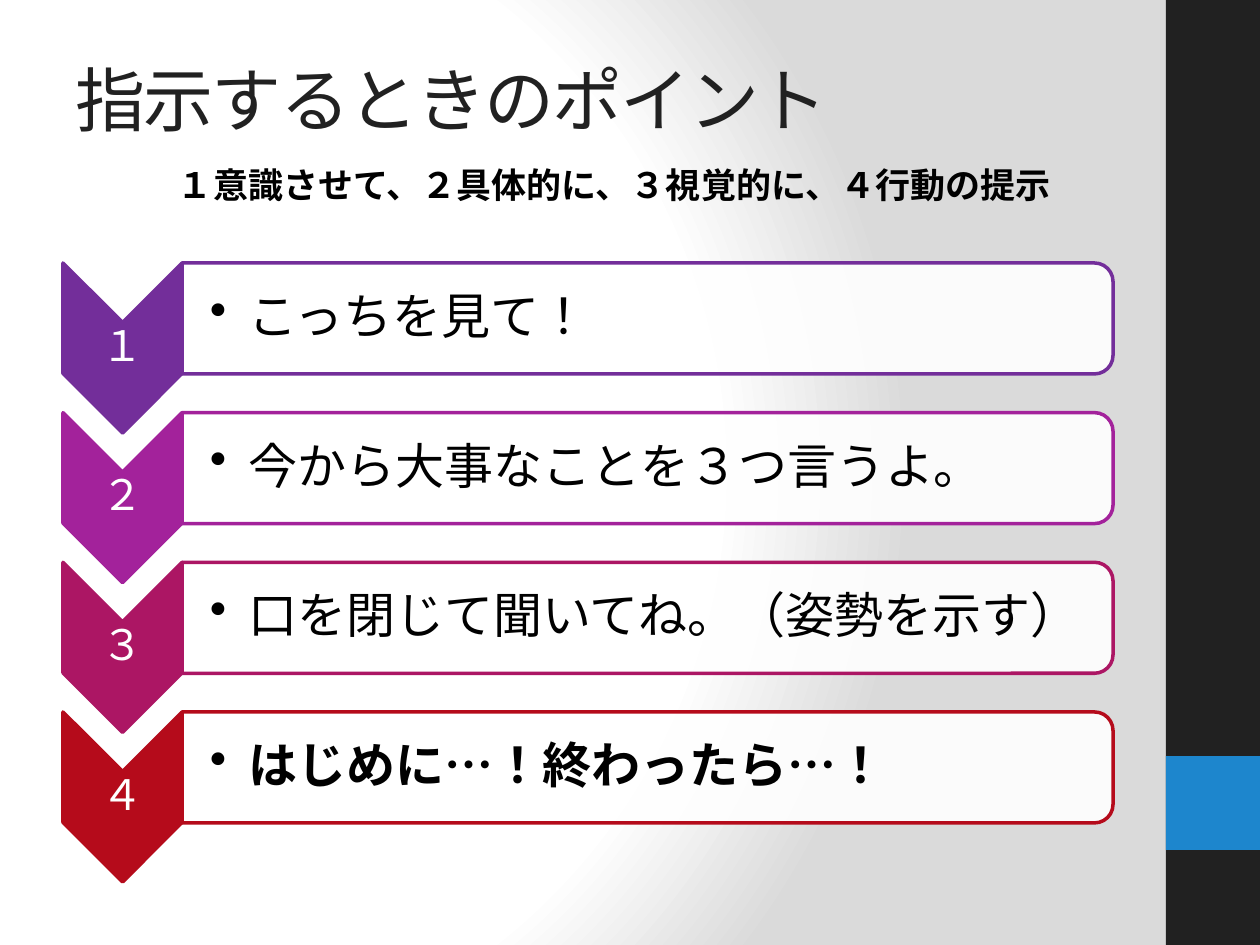
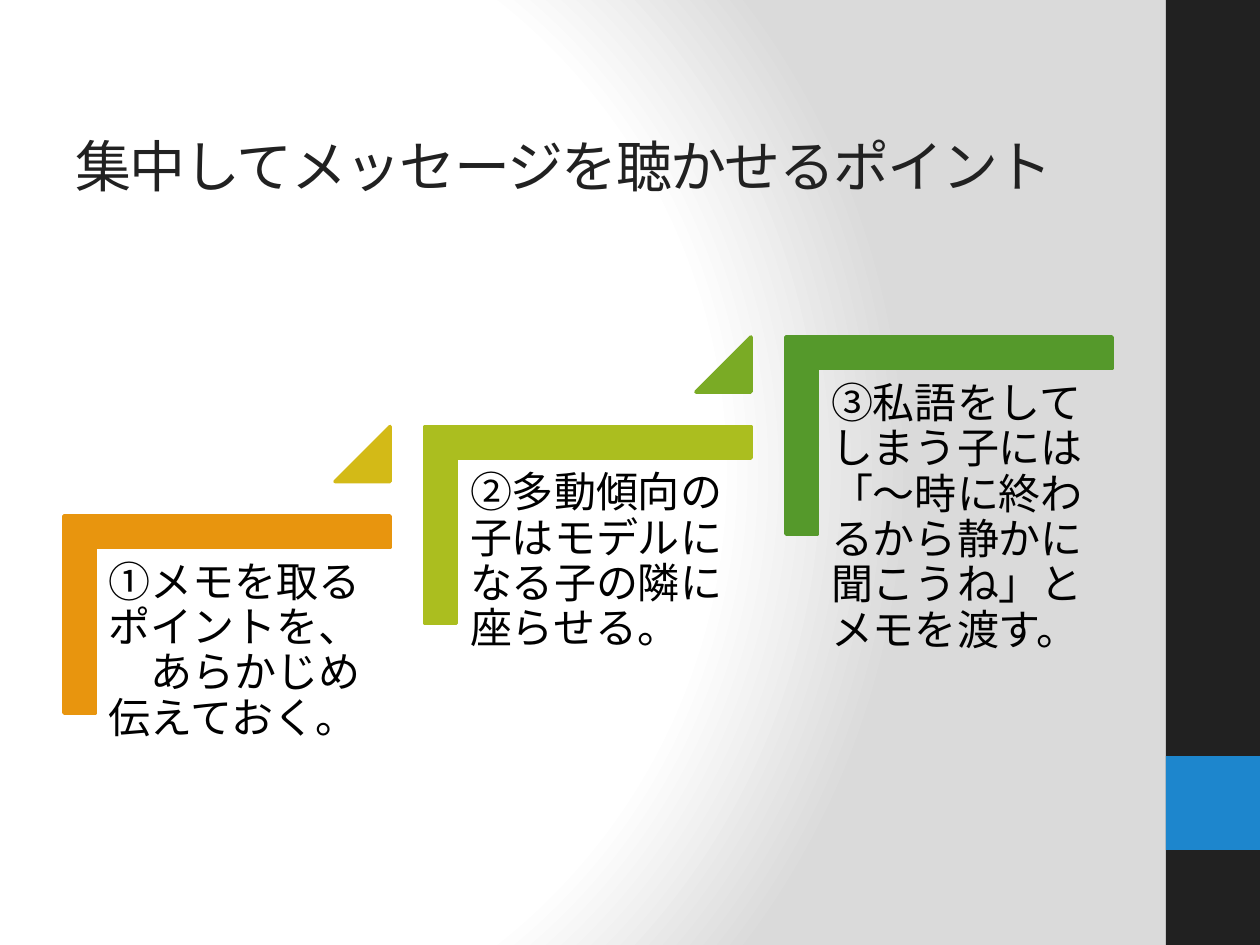
from pptx import Presentation
from pptx.dml.color import RGBColor
from pptx.enum.lang import MSO_LANGUAGE_ID as Language
from pptx.enum.shapes import MSO_SHAPE as Shape
from pptx.enum.text import MSO_ANCHOR as Anchor, MSO_AUTO_SIZE as AutoSize, PP_ALIGN as Align
from pptx.oxml import parse_xml
from pptx.oxml.ns import qn
from pptx.util import Emu, Pt

PX_PER_INCH = 126
SLIDE_WIDTH, SLIDE_HEIGHT = 1260, 945

BLACK = RGBColor(0x00, 0x00, 0x00)
WHITE = RGBColor(0xFF, 0xFF, 0xFF)
CHARCOAL = RGBColor(0x21, 0x21, 0x21)
BLUE = RGBColor(0x1D, 0x86, 0xCD)
PURPLE = RGBColor(0x73, 0x2E, 0x9A)
MAGENTA = RGBColor(0xA3, 0x22, 0x9B)
CRIMSON = RGBColor(0xAC, 0x16, 0x64)
RED = RGBColor(0xB5, 0x0B, 0x1B)
ORANGE = RGBColor(0xE8, 0x95, 0x0E)
YELLOW = RGBColor(0xD3, 0xBA, 0x17)
LIME = RGBColor(0xAB, 0xBE, 0x1F)
LEAF = RGBColor(0x7A, 0xAB, 0x25)
GREEN = RGBColor(0x55, 0x99, 0x2B)

TITLE_FONT, BODY_FONT, STEP_FONT = "Cambria", "Calibri", "Arial"

BACKGROUND = """
<a:gradFill xmlns:a="http://schemas.openxmlformats.org/drawingml/2006/main" rotWithShape="1">
  <a:gsLst>
    <a:gs pos="0"><a:srgbClr val="FFFFFF"/></a:gs>
    <a:gs pos="75000"><a:srgbClr val="FFFFFF"/></a:gs>
    <a:gs pos="100000"><a:srgbClr val="DADADA"/></a:gs>
  </a:gsLst>
  <a:path path="circle"><a:fillToRect l="20000" t="50000" r="100000" b="50000"/></a:path>
</a:gradFill>"""

# Number, colour, text, bold
INSTRUCTIONS = [
    ("１", PURPLE, "こっちを見て！", False),
    ("２", MAGENTA, "今から大事なことを３つ言うよ。", False),
    ("３", CRIMSON, "口を閉じて聞いてね。（姿勢を示す）", False),
    ("４", RED, "はじめに…！終わったら…！", True),
]

# Corner colour, colour of the triangle towards the next step, text
STEPS = [
    (ORANGE, YELLOW, "①メモを取るポイントを、　あらかじめ伝えておく。"),
    (LIME, LEAF, "②多動傾向の子はモデルになる子の隣に座らせる。"),
    (GREEN, None, "③私語をしてしまう子には「〜時に終わるから静かに聞こうね」とメモを渡す。"),
]


def px(length):
    return Emu(round(length * 914400 / PX_PER_INCH))


def add_filled_shape(slide, kind, box, fill, line=None, turned=False):
    """Add a shape filling box; a turned one is rotated by 90 degrees to fill it."""
    left, top, width, height = box
    if turned:
        left, top = left + (width - height) / 2, top + (height - width) / 2
        width, height = height, width
    shape = slide.shapes.add_shape(kind, px(left), px(top), px(width), px(height))
    shape.rotation = 90 if turned else 0
    shape.shadow.inherit = False
    shape.fill.solid()
    shape.fill.fore_color.rgb = fill
    if line is None:
        shape.line.fill.background()
    else:
        shape.line.color.rgb = line
        shape.line.width = Pt(2)
    return shape


def format_font(paragraph, name, size, color, bold=False):
    for run in paragraph.runs:
        font = run.font
        font.name, font.size, font.bold = name, Pt(size), bold
        font.color.rgb = color
        font.language_id = Language.JAPANESE


def add_text(slide, box, text, name, size, color, bold=False, insets=(3, 3, 3, 3),
             anchor=Anchor.TOP, align=Align.LEFT, spacing=0.9):
    text_frame = slide.shapes.add_textbox(*map(px, box)).text_frame
    text_frame.word_wrap = True
    text_frame.vertical_anchor = anchor
    (text_frame.margin_left, text_frame.margin_top,
     text_frame.margin_right, text_frame.margin_bottom) = map(px, insets)
    text_frame.text = text
    paragraph = text_frame.paragraphs[0]
    paragraph.alignment = align
    paragraph.line_spacing = spacing
    format_font(paragraph, name, size, color, bold)
    return paragraph


def add_bullet(paragraph, indent):
    properties = paragraph._p.get_or_add_pPr()
    properties.set("marL", str(px(indent)))
    properties.set("indent", str(-px(indent)))
    bullet = properties.makeelement(qn("a:buChar"), {"char": "•"})
    properties.append(bullet)


def set_background(master):
    master.background.fill.solid()
    properties = master._element.xpath("p:cSld/p:bg/p:bgPr")[0]
    properties.replace(properties[0], parse_xml(BACKGROUND))


def add_slide(presentation, title, box, size):
    slide = presentation.slides.add_slide(presentation.slide_layouts[5])

    # Side band with its blue block
    add_filled_shape(slide, Shape.RECTANGLE, (1166, 0, 94, SLIDE_HEIGHT), CHARCOAL)
    add_filled_shape(slide, Shape.RECTANGLE, (1166, 756, 94, 94), BLUE)

    # Title
    placeholder = slide.shapes.title
    (placeholder.left, placeholder.top,
     placeholder.width, placeholder.height) = map(px, box)
    text_frame = placeholder.text_frame
    text_frame.text = title
    text_frame.auto_size = AutoSize.NONE
    text_frame.vertical_anchor = Anchor.MIDDLE
    paragraph = text_frame.paragraphs[0]
    paragraph.alignment = Align.LEFT
    format_font(paragraph, TITLE_FONT, size, CHARCOAL)
    paragraph.runs[0]._r.get_or_add_rPr().set("spc", "-100")
    return slide


def add_instruction(slide, box, number, color, text, bold):
    left, top, width, height = box
    chevron_width, pane_height = 119, 111

    # Numbered chevron
    add_filled_shape(slide, Shape.CHEVRON, (left, top, chevron_width, height),
                     color, color, turned=True)
    add_text(slide, (left, top + 59, chevron_width, 50), number,
             BODY_FONT, 24, WHITE, align=Align.CENTER)

    # Pane rounded on the right
    pane_left, pane_width = left + chevron_width, width - chevron_width
    pane = add_filled_shape(slide, Shape.ROUND_2_SAME_RECTANGLE,
                            (pane_left, top, pane_width, pane_height),
                            WHITE, color, turned=True)
    fill_color = pane._element.spPr.find(qn("a:solidFill"))[0]
    fill_color.append(fill_color.makeelement(qn("a:alpha"), {"val": "90000"}))
    paragraph = add_text(slide, (pane_left, top + 6, pane_width - 5, pane_height - 12),
                         text, BODY_FONT, 28, BLACK, bold,
                         insets=(28, 3, 3, 3), anchor=Anchor.MIDDLE)
    add_bullet(paragraph, 39)


def add_instruction_list(slide, box):
    left, top, width, height = box
    row_height = 170
    pitch = (height - row_height) / (len(INSTRUCTIONS) - 1)
    for index, instruction in enumerate(INSTRUCTIONS):
        add_instruction(slide, (left, top + index * pitch, width, row_height), *instruction)


def add_staircase(slide, box):
    left, top, width, height = box
    step_width, step_height, triangle_size, text_offset = 326, 197, 55, 32
    pitch = (width - step_width) / (len(STEPS) - 1)
    rise = (height - step_height) / (len(STEPS) - 1)
    for index, (color, triangle_color, text) in enumerate(STEPS):
        step_left = left + index * pitch
        step_top = top + height - step_height - index * rise

        # Corner bracket and its text
        corner = add_filled_shape(slide, Shape.CORNER,
                                  (step_left, step_top, step_width, step_height),
                                  color, color, turned=True)
        corner.adjustments[0] = corner.adjustments[1] = 0.16
        add_text(slide, (step_left + text_offset, step_top + text_offset, 295, 258),
                 text, STEP_FONT, 24, BLACK, insets=(13, 13, 13, 13))

        # Triangle level with the top of the next step
        if triangle_color is not None:
            triangle = add_filled_shape(
                slide, Shape.ISOSCELES_TRIANGLE,
                (step_left + step_width - triangle_size, step_top - rise,
                 triangle_size, triangle_size),
                triangle_color, triangle_color)
            triangle.adjustments[0] = 1


def build_instruction_slide(presentation):
    slide = add_slide(presentation, "指示するときのポイント", (63, 38, 1050, 120), 40)
    add_instruction_list(slide, (63, 263, 1050, 619))
    add_text(slide, (63, 158, 1050, 53),
             "１意識させて、２具体的に、３視覚的に、４行動の提示",
             BODY_FONT, 20, BLACK, bold=True, insets=(115, 6, 13, 6), spacing=1.0)


def build_concentration_slide(presentation):
    slide = add_slide(presentation, "集中してメッセージを聴かせるポイント",
                      (63, 95, 1050, 141), 32)
    add_staircase(slide, (64, 337, 1048, 376))


def main():
    presentation = Presentation()
    presentation.slide_width = px(SLIDE_WIDTH)
    presentation.slide_height = px(SLIDE_HEIGHT)
    set_background(presentation.slide_master)
    build_instruction_slide(presentation)
    build_concentration_slide(presentation)
    presentation.save("out.pptx")


if __name__ == "__main__":
    main()
